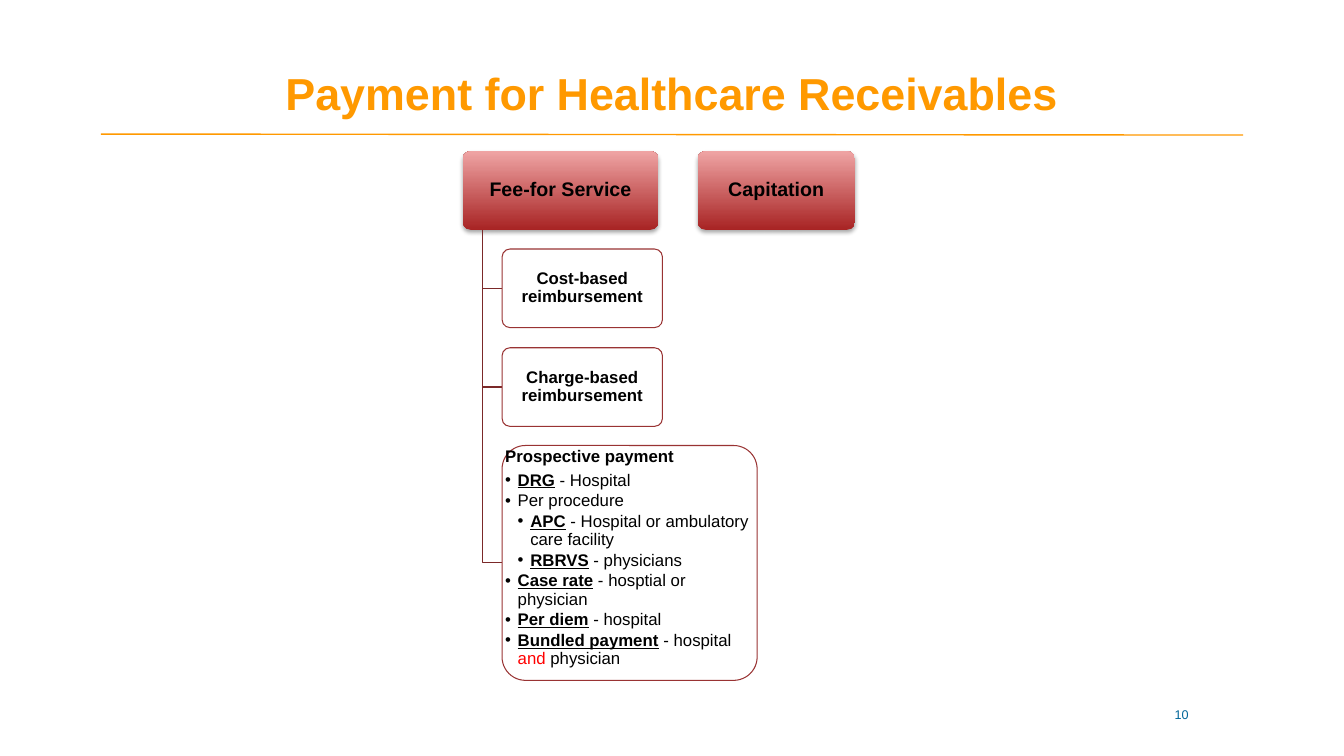
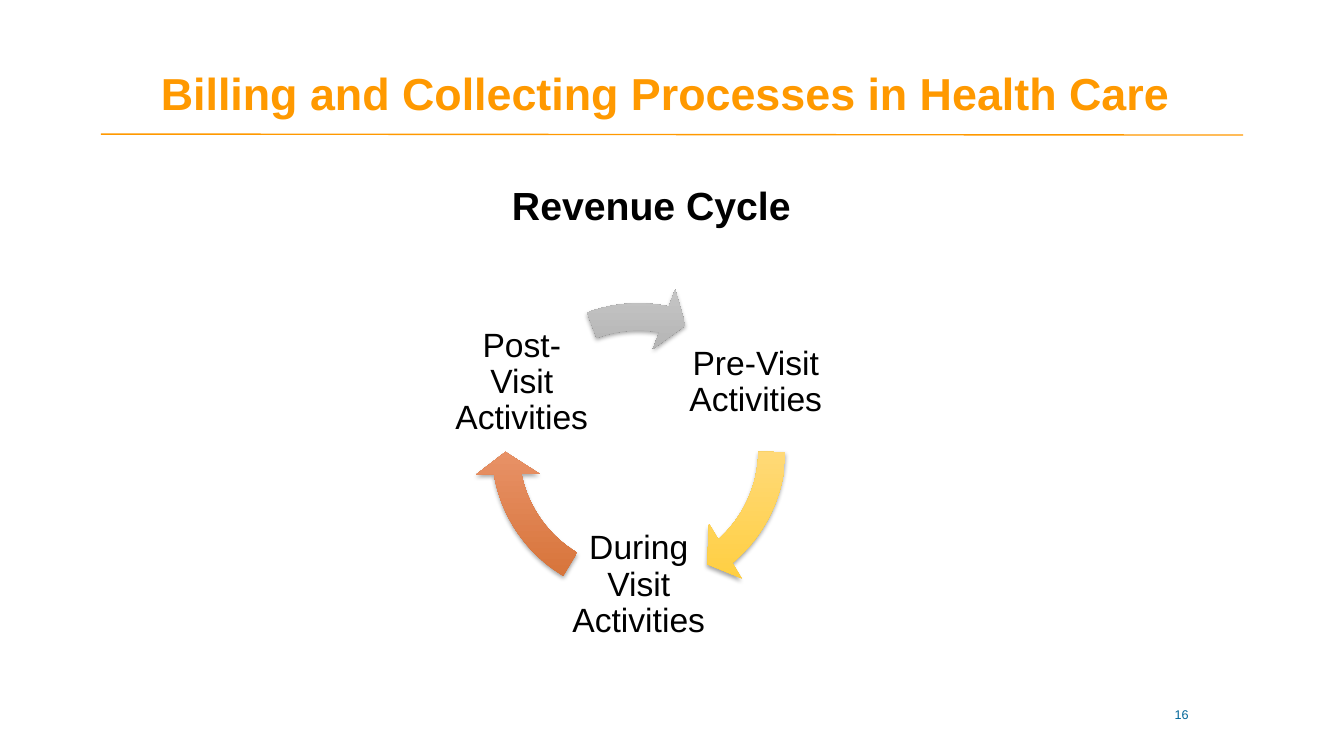
import math

import lxml.etree
import pptx
import pptx.dml.color
import pptx.enum.shapes
import pptx.enum.text
import pptx.oxml.ns
import pptx.util

Inches, Pt = pptx.util.Inches, pptx.util.Pt
SHAPE = pptx.enum.shapes.MSO_SHAPE
ALIGN = pptx.enum.text.PP_ALIGN
ANCHOR = pptx.enum.text.MSO_ANCHOR
qn = pptx.oxml.ns.qn

COLORS = {
    "accent": "FF9900", "number": "006699", "text": "000000", "alert": "FF0000",
    "box": "FFFFFF", "box_line": "993333", "tree_line": "7B2929",
}
GRADIENTS = {  # bottom colour, top colour
    "red": ("A82424", "EFA4A4"), "yellow": ("FFCC33", "FFE7BF"),
    "orange": ("D26B2D", "FFBAA3"), "gray": ("666666", "C6C6C6"),
}
RUN_STYLES = {
    "plain": {}, "bold": {"bold": True},
    "term": {"bold": True, "underline": True}, "alert": {},
}
FONT = "Arial"


def rgb(value):
    return pptx.dml.color.RGBColor.from_string(value)


def set_all(target, values):
    for attribute, value in values.items():
        setattr(target, attribute, value)


def inches(*lengths):
    return [Inches(length) for length in lengths]


# Text
def write(paragraph, runs, size, color="text", **layout):
    set_all(paragraph, layout)
    for text, style in runs:
        run = paragraph.add_run()
        run.text = text
        set_all(run.font, {"name": FONT, "size": Pt(size), **RUN_STYLES[style]})
        run.font.color.rgb = rgb(COLORS["alert" if style == "alert" else color])


def set_frame(frame, anchor=ANCHOR.TOP, margins=(0.1, 0.05, 0.1, 0.05)):
    sides = ("margin_left", "margin_top", "margin_right", "margin_bottom")
    set_all(frame, {"word_wrap": True, "vertical_anchor": anchor,
                    "auto_size": pptx.enum.text.MSO_AUTO_SIZE.NONE,
                    **dict(zip(sides, inches(*margins)))})
    return frame


def add_text(slide, box, **frame_format):
    return set_frame(slide.shapes.add_textbox(*inches(*box)).text_frame, **frame_format)


def add_bullet(paragraph, level):
    properties = paragraph._p.get_or_add_pPr()
    properties.set("marL", str(Inches(0.125 * level)))
    properties.set("indent", str(-Inches(0.125)))
    lxml.etree.SubElement(properties, qn("a:buFont")).set("typeface", FONT)
    lxml.etree.SubElement(properties, qn("a:buChar")).set("char", "•")


# Shapes
def add_rule(slide, start, end):
    rule = slide.shapes.add_connector(
        pptx.enum.shapes.MSO_CONNECTOR.STRAIGHT, *inches(*start, *end))
    rule.line.color.rgb = rgb(COLORS["accent"])
    rule.line.width = Pt(1)
    lxml.etree.SubElement(rule._element.spPr, qn("a:effectLst"))


def set_outline(shape, color):
    shape.shadow.inherit = False
    shape.line.color.rgb = rgb(COLORS[color])
    shape.line.width = Pt(0.75)


def add_elbow(slide, start, end):
    builder = slide.shapes.build_freeform(*inches(*start))
    corner = (start[0], end[1])
    builder.add_line_segments([inches(*corner), inches(*end)], close=False)
    elbow = builder.convert_to_shape()
    elbow.fill.background()
    set_outline(elbow, "tree_line")


def add_glossy(slide, preset, box, gradient):
    shape = slide.shapes.add_shape(preset, *inches(*box))
    shape.line.fill.background()
    shape.fill.gradient()
    shape.fill.gradient_angle = 90
    for stop, color in zip(shape.fill.gradient_stops, GRADIENTS[gradient]):
        stop.color.rgb = rgb(color)
    shape.shadow.inherit = False
    effects = shape._element.spPr.find(qn("a:effectLst"))
    shadow = lxml.etree.SubElement(effects, qn("a:outerShdw"), blurRad="40000",
                                   dist="23000", dir="5400000", rotWithShape="0")
    black = lxml.etree.SubElement(shadow, qn("a:srgbClr"), val="000000")
    lxml.etree.SubElement(black, qn("a:alpha"), val="35000")
    return shape


def add_outlined(slide, box):
    shape = slide.shapes.add_shape(SHAPE.ROUNDED_RECTANGLE, *inches(*box))
    shape.adjustments[0] = 0.1
    shape.fill.solid()
    shape.fill.fore_color.rgb = rgb(COLORS["box"])
    set_outline(shape, "box_line")
    return shape


def label(shape, text, size):
    frame = set_frame(shape.text_frame, ANCHOR.MIDDLE, (0.03, 0.02, 0.03, 0.02))
    write(frame.paragraphs[0], [(text, "bold")], size,
          alignment=ALIGN.CENTER, line_spacing=0.9)


# Shared slide frame
def add_slide(deck, title, number):
    slide = deck.slides.add_slide(deck.slide_layouts[5])
    add_rule(slide, (1, 1.33), (12.33, 1.34))
    heading = slide.shapes.title
    set_all(heading, dict(zip(("left", "top", "width", "height"),
                              inches(1, 0.01, 11.33, 1.33))))
    frame = set_frame(heading.text_frame, ANCHOR.BOTTOM, (0, 0, 0, 0.15))
    write(frame.paragraphs[0], [(title, "bold")], 32, "accent",
          alignment=ALIGN.CENTER, line_spacing=Pt(36))
    footer = add_text(slide, (10.33, 6.96, 2.78, 0.4))
    write(footer.paragraphs[0], [(number, "plain")], 9, "number",
          alignment=ALIGN.CENTER)
    return slide


# Payment tree
PROSPECTIVE_PAYMENT = [  # level, runs
    (0, [("Prospective payment", "bold")]),
    (1, [("DRG", "term"), (" - Hospital", "plain")]),
    (1, [("Per procedure", "plain")]),
    (2, [("APC", "term"), (" - Hospital or ambulatory care facility", "plain")]),
    (2, [("RBRVS", "term"), (" - physicians", "plain")]),
    (1, [("Case rate", "term"), (" - hosptial or physician", "plain")]),
    (1, [("Per diem", "term"), (" - hospital", "plain")]),
    (1, [("Bundled payment", "term"), (" - hospital ", "plain"),
         ("and ", "alert"), ("physician", "plain")]),
]


def add_details(slide, box):
    add_outlined(slide, box)
    frame = add_text(slide, box, margins=(0.03, 0.02, 0.03, 0.02))
    for index, (level, runs) in enumerate(PROSPECTIVE_PAYMENT):
        paragraph = frame.add_paragraph() if index else frame.paragraphs[0]
        if level:
            add_bullet(paragraph, level)
        write(paragraph, runs, 12, line_spacing=0.9,
              space_after=Pt(1.8 if level else 4.2))


def add_payment_tree(slide, left, top):
    row = 0.78
    # Payment types
    for text, offset, width in (("Fee-for Service", 0, 1.94), ("Capitation", 2.33, 1.56)):
        head = add_glossy(slide, SHAPE.ROUNDED_RECTANGLE,
                          (left + offset, top, width, row), "red")
        head.adjustments[0] = 0.1
        label(head, text, 14)
    # Fee-for-service branches
    trunk, branch = left + 0.2, left + 0.39
    for text, offset, width, height in (("Cost-based reimbursement", 0.97, 1.59, row),
                                        ("Charge-based reimbursement", 1.95, 1.59, row),
                                        (None, 2.92, 2.53, 2.33)):
        box = (branch, top + offset, width, height)
        add_elbow(slide, (trunk, top + row), (branch, top + offset + height / 2))
        if text:
            label(add_outlined(slide, box), text, 12)
        else:
            add_details(slide, box)


# Revenue cycle
def add_revenue_cycle(slide, left, top, size):
    label_size, radius = 1.38, 1.34
    stages = (  # text, label angle, arrow colour, arrow tail and head angles
        ("Pre-Visit Activities", -30, "yellow", 0.85, 49.43),
        ("During Visit Activities", 90, "orange", 120.98, 169.56),
        ("Post-Visit Activities", 210, "gray", 249.43, 280.97),
    )
    for text, angle, color, tail, head in stages:
        turn = math.radians(angle)
        x = left + size / 2 + radius * math.cos(turn) - label_size / 2
        y = top + size / 2 + radius * math.sin(turn) - label_size / 2
        frame = add_text(slide, (x, y, label_size, label_size),
                         anchor=ANCHOR.MIDDLE, margins=(0.03,) * 4)
        write(frame.paragraphs[0], [(text, "plain")], 24,
              alignment=ALIGN.CENTER, line_spacing=0.9)
        arrow = add_glossy(slide, SHAPE.CIRCULAR_ARROW, (left, top, size, size), color)
        # Thickness and head width in percent; 60 percent is one degree
        for index, percent in enumerate((8.2, 9.6 * 60, head * 60, tail * 60, 9.6)):
            arrow.adjustments[index] = percent / 100


def main():
    deck = pptx.Presentation()
    set_all(deck, {"slide_width": Inches(13.33), "slide_height": Inches(7.5)})

    payment = add_slide(deck, "Payment for Healthcare Receivables", "10")
    add_payment_tree(payment, 4.59, 1.5)

    billing = add_slide(deck, "Billing and Collecting Processes in Health Care ", "16")
    add_revenue_cycle(billing, 4.7, 2.83, 3.27)
    subtitle = add_text(billing, (4.98, 1.75, 3.17, 0.57))
    write(subtitle.paragraphs[0], [("Revenue Cycle", "bold")], 28)

    deck.save("out.pptx")


if __name__ == "__main__":
    main()
